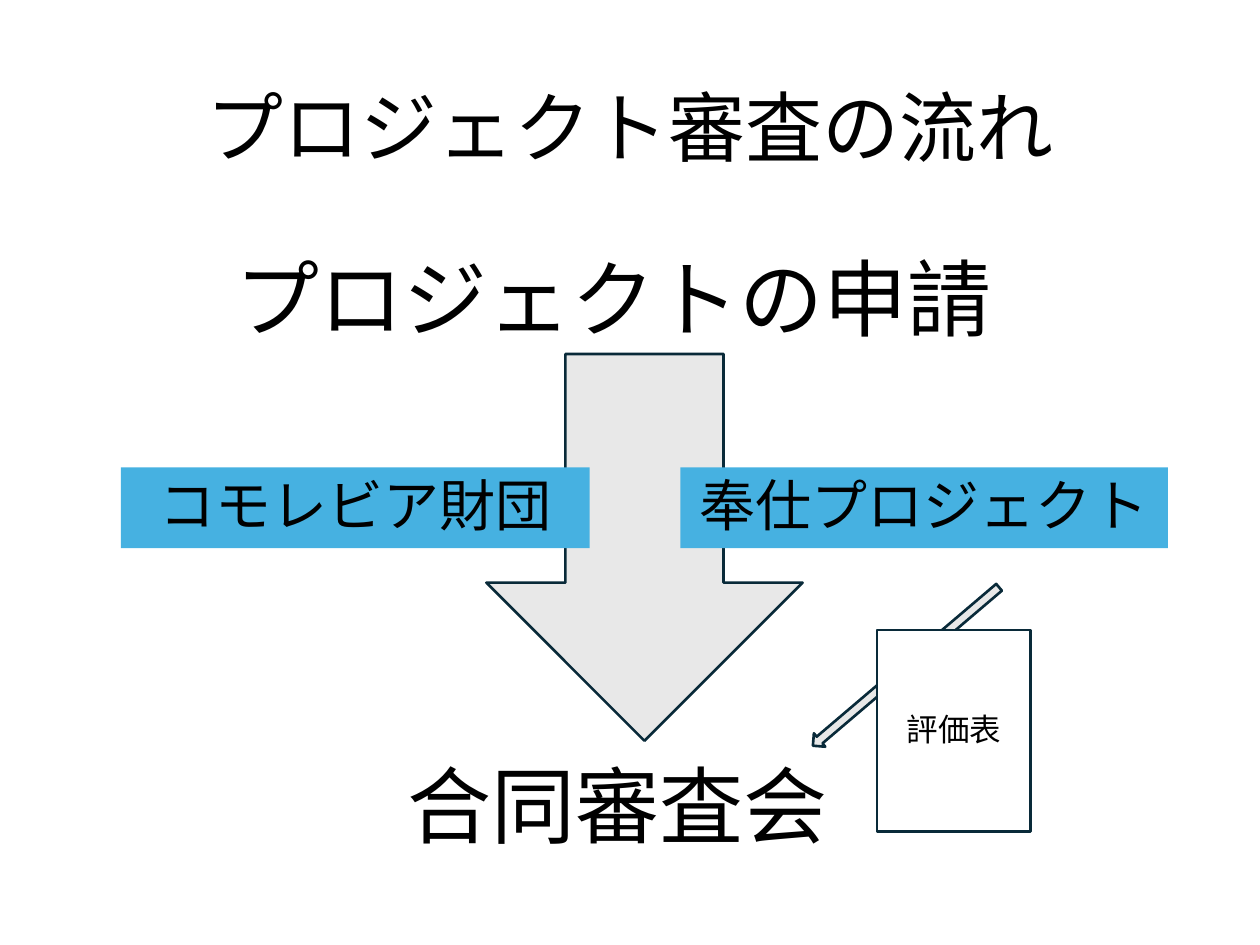
from lxml import etree
from pptx import Presentation
from pptx import util as u
from pptx.dml import color
from pptx.enum import shapes, text
from pptx.oxml import ns


def tint(code):
    return color.RGBColor.from_string(code)


class Deck:
    font = "Noto Sans CJK JP"
    ink = "000000"
    edge = "092A39"
    grey = "E8E8E8"
    blue = "46B1E1"
    white = "FFFFFF"

    def __init__(self):
        self.show = Presentation()
        self.show.slide_width = u.Inches(10)
        self.show.slide_height = u.Inches(7.5)
        self.slide = self.show.slides.add_slide(self.show.slide_layouts[6])

    def letter(self, item, words, size, wrap=True):
        frame = item.text_frame
        frame.text = words
        frame.word_wrap = wrap
        frame.margin_top = frame.margin_bottom = 0
        frame.vertical_anchor = text.MSO_ANCHOR.MIDDLE
        for para in frame.paragraphs:
            para.alignment = text.PP_ALIGN.CENTER
            para.line_spacing = 0.92
            for run in para.runs:
                run.font.size = u.Pt(size)
                run.font.name = self.font
                run.font.color.rgb = tint(self.ink)
                asian = etree.SubElement(run.font._element, ns.qn("a:ea"))
                asian.set("typeface", self.font)

    def shape(self, kind, box, fill, edge=None, turn=0):
        item = self.slide.shapes.add_shape(kind, *map(u.Inches, box))
        item.shadow.inherit = False
        item.rotation = turn
        item.fill.solid()
        item.fill.fore_color.rgb = tint(fill)
        if edge:
            item.line.color.rgb = tint(edge)
            item.line.width = u.Pt(1.5)
        else:
            item.line.fill.background()
        return item

    def arrow(self, kind, box, turn=0):
        return self.shape(kind, box, self.grey, self.edge, turn)

    def panel(self, box, words, size, fill, edge=None):
        item = self.shape(shapes.MSO_SHAPE.RECTANGLE, box, fill, edge)
        self.letter(item, words, size)

    def label(self, box, words, size, wrap=True):
        item = self.slide.shapes.add_textbox(*map(u.Inches, box))
        self.letter(item, words, size, wrap)


def main():
    deck = Deck()
    deck.arrow(shapes.MSO_SHAPE.DOWN_ARROW, (3.86, 2.81, 2.51, 3.07))
    deck.label((1.51, 0.62, 6.99, 0.84), "プロジェクト審査の流れ", 44, False)
    deck.label((1.4, 1.95, 6.94, 0.91), "プロジェクトの申請", 48)
    deck.label((1.43, 5.97, 6.94, 0.91), "合同審査会", 48)
    for left, width, words in (
        (0.96, 3.72, "コモレビア財団"),
        (5.4, 3.87, "奉仕プロジェクト"),
    ):
        deck.panel((left, 3.71, width, 0.64), words, 32, deck.blue)
    deck.arrow(shapes.MSO_SHAPE.RIGHT_ARROW, (6.22, 5.22, 1.94, 0.14), 139.6)
    deck.panel((6.96, 5, 1.22, 1.6), "評価表", 18, deck.white, deck.edge)
    deck.show.save("out.pptx")


if __name__ == "__main__":
    main()
